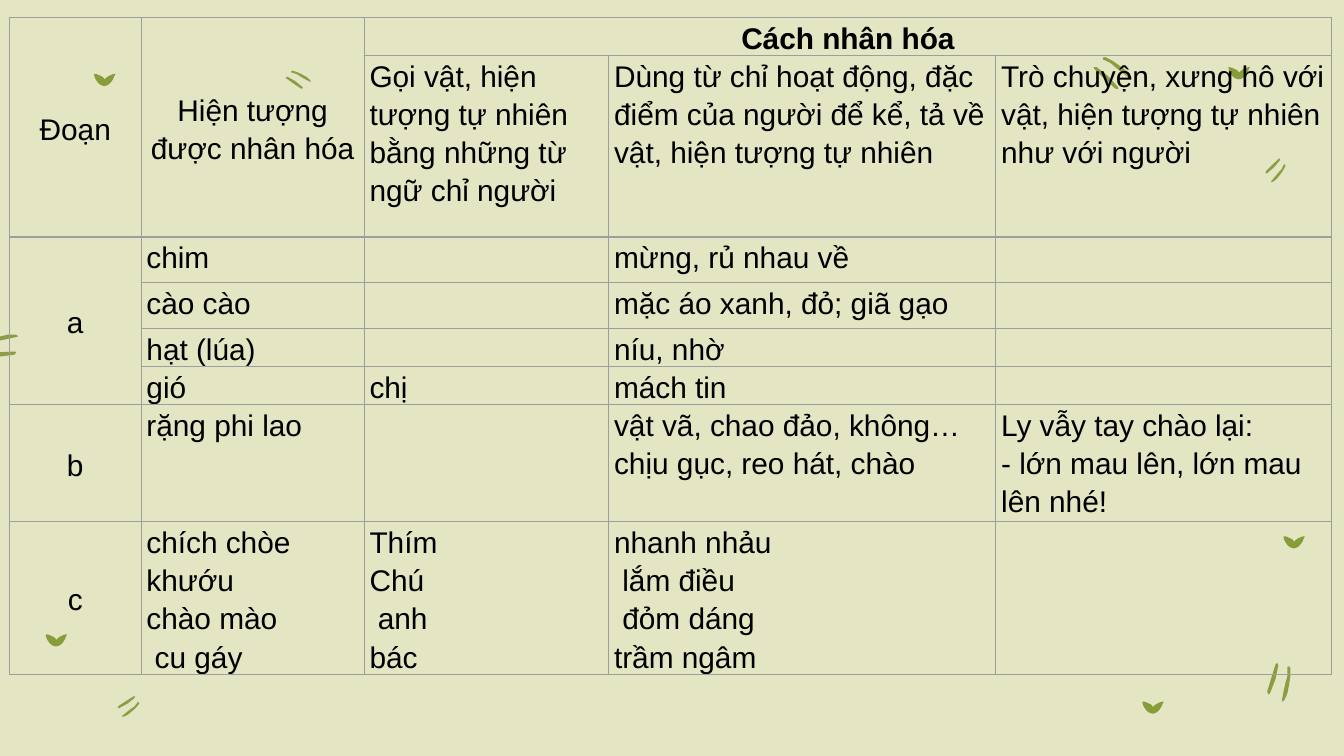
from lxml import etree
from pptx import Presentation
from pptx.dml.color import RGBColor
from pptx.enum.text import MSO_ANCHOR, PP_ALIGN
from pptx.oxml.ns import qn
from pptx.util import Inches, Pt


class Theme:
    background = RGBColor.from_string("E3E5C3")
    stroke = RGBColor.from_string("8D9D43")
    sprout = RGBColor.from_string("869D39")
    ink = RGBColor.from_string("000000")
    border = "9E9E9E"
    border_width = Pt(0.75)
    font = "Arial"
    size = Pt(16)


# Outlines in percent of their own width and height
SHORT_STROKE = [(10, 0), (2, 6), (30, 50), (60, 94), (90, 100), (100, 94), (83, 48), (40, 6)]
LONG_STROKE = [(10, 0), (0, 4), (10, 10), (35, 28), (47, 50), (62, 70), (80, 93),
               (87, 100), (97, 95), (100, 90), (97, 70), (77, 46), (57, 24), (28, 3)]
SPROUT = [(0, 0), (12, 2), (25, 12), (38, 22), (45, 33), (50, 45), (56, 33), (66, 20),
          (80, 8), (92, 0), (100, 0), (95, 17), (88, 45), (80, 67), (70, 85), (60, 95),
          (50, 100), (40, 97), (28, 88), (18, 72), (8, 45), (2, 22)]

# Short stroke corner, long stroke corner, rotation
LARGE_PAIRS = [((8.2, 0.46), (8.27, 0.38), 322.6),
               ((9.44, 4.93), (9.52, 4.96), 26.4),
               ((-0.03, 2.52), (-0.04, 2.4), 272.6)]
SMALL_PAIRS = [((0.92, 5.15), (0.94, 5.2), 67.1),
               ((2.17, 0.54), (2.21, 0.49), 315),
               ((9.45, 1.16), (9.48, 1.21), 55.3)]
SPROUTS = [(0.34, 4.72), (8.5, 5.22), (9.14, 0.5), (9.55, 3.99), (0.7, 0.55)]

COLUMN_WIDTHS = [0.98, 1.66, 1.82, 2.88, 2.5]
ROW_HEIGHTS = [0.28, 1.35, 0.34, 0.34, 0.28, 0.28, 0.87, 1.13]
# Each line of a cell is a paragraph
ROWS = [
    ["Đoạn", "Hiện tượng được nhân hóa", "Cách nhân hóa", "", ""],
    ["", "", "Gọi vật, hiện tượng tự nhiên bằng những từ ngữ chỉ người",
     "Dùng từ chỉ hoạt động, đặc điểm của người để kể, tả về vật, hiện tượng tự nhiên",
     "Trò chuyện, xưng hô với vật, hiện tượng tự nhiên như với người"],
    ["a", "chim", "", "mừng, rủ nhau về", ""],
    ["", "cào cào", "", "mặc áo xanh, đỏ; giã gạo", ""],
    ["", "hạt (lúa)", "", "níu, nhờ", ""],
    ["", "gió", "chị", "mách tin", ""],
    ["b", "rặng phi lao", "", "vật vã, chao đảo, không…chịu gục, reo hát, chào",
     "Ly vẫy tay chào lại:\n- lớn mau lên, lớn mau lên nhé!"],
    ["c", "chích chòe khướu\nchào mào\n cu gáy", "Thím\nChú\n anh\nbác",
     "nhanh nhảu\n lắm điều\n đỏm dáng\ntrầm ngâm", ""],
]
MERGES = [((0, 0), (1, 0)), ((0, 1), (1, 1)), ((0, 2), (0, 4)), ((2, 0), (5, 0))]

prs = Presentation()
prs.slide_width = Inches(10)
prs.slide_height = prs.slide_width * 9 // 16
slide = prs.slides.add_slide(prs.slide_layouts[6])
slide.background.fill.solid()
slide.background.fill.fore_color.rgb = Theme.background


def draw_outline(points, corner, size, color, rotation=0):
    scale = tuple(Inches(length) / 100 for length in size)
    builder = slide.shapes.build_freeform(*points[0], scale=scale)
    builder.add_line_segments(points[1:], close=True)
    outline = builder.convert_to_shape(*map(Inches, corner))
    outline.rotation = rotation
    outline.shadow.inherit = False
    outline.fill.solid()
    outline.fill.fore_color.rgb = color
    outline.line.fill.background()


def set_borders(cell):
    properties = cell._tc.get_or_add_tcPr()
    for side in ("lnL", "lnR", "lnT", "lnB"):
        line = etree.SubElement(properties, qn(f"a:{side}"), w=str(Theme.border_width))
        fill = etree.SubElement(line, qn("a:solidFill"))
        etree.SubElement(fill, qn("a:srgbClr"), val=Theme.border)


for pairs, short_size, long_size in [(LARGE_PAIRS, (0.06, 0.24), (0.09, 0.26)),
                                     (SMALL_PAIRS, (0.04, 0.15), (0.06, 0.16))]:
    for short_corner, long_corner, rotation in pairs:
        draw_outline(SHORT_STROKE, short_corner, short_size, Theme.stroke, rotation)
        draw_outline(LONG_STROKE, long_corner, long_size, Theme.stroke, rotation)
for corner in SPROUTS:
    draw_outline(SPROUT, corner, (0.16, 0.09), Theme.sprout)

personification = slide.shapes.add_table(
    len(ROWS), len(COLUMN_WIDTHS), Inches(0.07), Inches(0.13),
    Inches(sum(COLUMN_WIDTHS)), Inches(sum(ROW_HEIGHTS))).table
personification.first_row = False
personification.horz_banding = False
for column, width in zip(personification.columns, COLUMN_WIDTHS):
    column.width = Inches(width)
for row, height in zip(personification.rows, ROW_HEIGHTS):
    row.height = Inches(height)

for r, texts in enumerate(ROWS):
    for c, text in enumerate(texts):
        cell = personification.cell(r, c)
        centred = r == 0 or c == 0
        cell.margin_left = cell.margin_right = Inches(0.04)
        cell.margin_top = cell.margin_bottom = 0
        cell.vertical_anchor = MSO_ANCHOR.MIDDLE if centred else MSO_ANCHOR.TOP
        set_borders(cell)
        cell.fill.background()
        cell.text = text
        for paragraph in cell.text_frame.paragraphs:
            paragraph.alignment = PP_ALIGN.CENTER if centred else PP_ALIGN.LEFT
            paragraph.line_spacing = 1.15
            paragraph.font.name = Theme.font
            paragraph.font.size = Theme.size
            paragraph.font.bold = (r, c) == (0, 2)
            paragraph.font.color.rgb = Theme.ink

for first, last in MERGES:
    personification.cell(*first).merge(personification.cell(*last))

prs.save("out.pptx")
